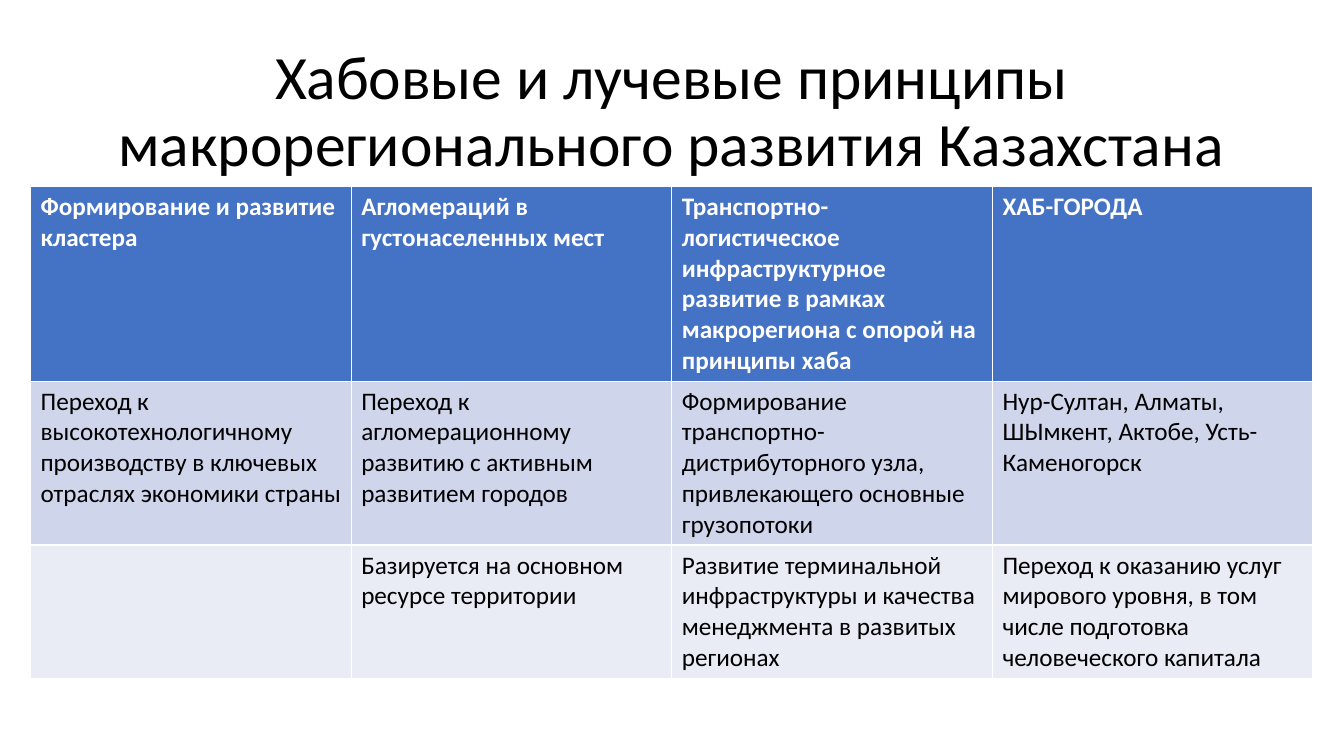
import pptx
import pptx.util
import pptx.dml.color
import pptx.enum.text

Cm = pptx.util.Cm
Color = pptx.dml.color.RGBColor
BLACK = Color(0x00, 0x00, 0x00)
WHITE = Color(0xFF, 0xFF, 0xFF)
BLUE = Color(0x44, 0x72, 0xC4)
MID = Color(0xCF, 0xD5, 0xEA)
PALE = Color(0xE9, 0xEB, 0xF5)

TITLE = "Хабовые и лучевые принципы макрорегионального развития Казахстана"
ROWS = [
    ["Формирование и развитие кластера",
     "Агломераций в густонаселенных мест",
     "Транспортно-логистическое инфраструктурное развитие в рамках "
     "макрорегиона с опорой на принципы хаба",
     "ХАБ-ГОРОДА"],
    ["Переход к высокотехнологичному производству в ключевых отраслях экономики страны",
     "Переход к агломерационному развитию с активным развитием городов",
     "Формирование транспортно-дистрибуторного узла, привлекающего основные грузопотоки",
     "Нур-Султан, Алматы, ШЫмкент, Актобе, Усть-Каменогорск"],
    ["",
     "Базируется на основном ресурсе территории",
     "Развитие терминальной инфраструктуры и качества менеджмента в развитых регионах",
     "Переход к оказанию услуг мирового уровня, в том числе подготовка "
     "человеческого капитала"],
]
HEIGHTS = [4.8, 4.1, 3.3]
FILLS = [BLUE, MID, PALE]


class Deck:
    face = "Calibri"

    def __init__(self):
        self.show = pptx.Presentation()
        self.show.slide_width = Cm(33.87)
        self.show.slide_height = Cm(19.05)
        self.slide = self.show.slides.add_slide(self.show.slide_layouts[5])

    def style(self, frame, size, color, bold=False):
        for para in frame.paragraphs:
            for run in para.runs:
                run.font.name = self.face
                run.font.size = pptx.util.Pt(size)
                run.font.bold = bold
                run.font.color.rgb = color

    def title(self, text, left, top, width, height):
        box = self.slide.shapes.title
        box.left, box.top = Cm(left), Cm(top)
        box.width, box.height = Cm(width), Cm(height)
        frame = box.text_frame
        frame.text = text
        frame.word_wrap = True
        frame.auto_size = pptx.enum.text.MSO_AUTO_SIZE.NONE
        frame.vertical_anchor = pptx.enum.text.MSO_ANCHOR.MIDDLE
        para = frame.paragraphs[0]
        para.alignment = pptx.enum.text.PP_ALIGN.CENTER
        para.line_spacing = 0.9
        self.style(frame, 44, BLACK)

    def table(self, rows, heights, fills, left, top, width):
        grid = self.slide.shapes.add_table(
            len(rows), len(rows[0]), Cm(left), Cm(top),
            Cm(width), Cm(sum(heights))).table
        for r, texts in enumerate(rows):
            grid.rows[r].height = Cm(heights[r])
            for c, text in enumerate(texts):
                cell = grid.cell(r, c)
                cell.fill.solid()
                cell.fill.fore_color.rgb = fills[r]
                cell.text_frame.text = text
                head = r == 0
                self.style(cell.text_frame, 18, WHITE if head else BLACK, head)


def main():
    deck = Deck()
    deck.title(TITLE, 2.33, 1.01, 29.21, 3.68)
    deck.table(ROWS, HEIGHTS, FILLS, 0.77, 4.7, 32.32)
    deck.show.save("out.pptx")


if __name__ == "__main__":
    main()
